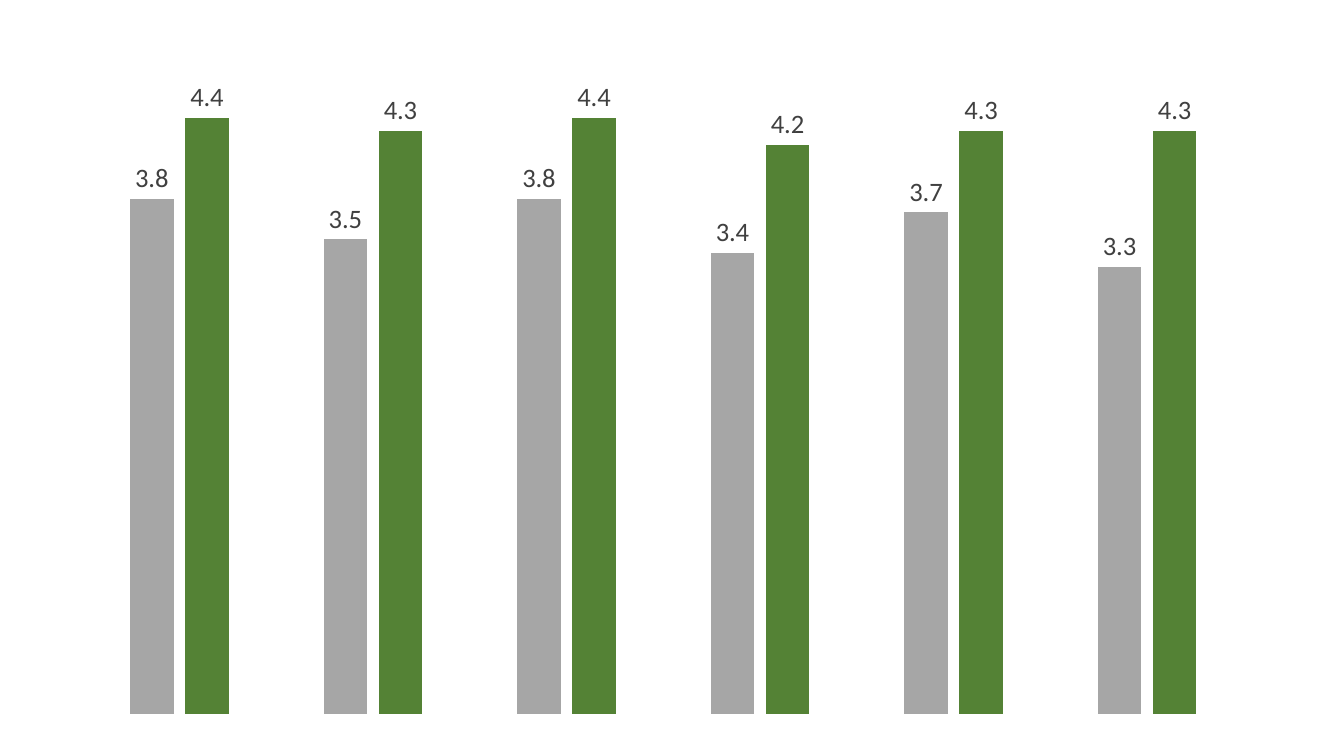
from pptx import Presentation
from pptx.chart.data import CategoryChartData
from pptx.dml.color import RGBColor
from pptx.enum.chart import XL_CHART_TYPE, XL_LABEL_POSITION
from pptx.util import Pt

BLACK = RGBColor(0x00, 0x00, 0x00)
LABEL_GRAY = RGBColor(0x40, 0x40, 0x40)
BAR_GRAY = RGBColor(0xA6, 0xA6, 0xA6)
BAR_GREEN = RGBColor(0x54, 0x82, 0x35)

CATEGORIES = ["1", "2", "3", "4", "5", "6"]
SERIES = [
    ("Series 1", [3.8, 3.5, 3.8, 3.4, 3.7, 3.3], BAR_GRAY),
    ("Series 2", [4.4, 4.3, 4.4, 4.2, 4.3, 4.3], BAR_GREEN),
]


def format_text(text, *, size, color, name="Calibri"):
    text.font.size = Pt(size)
    text.font.color.rgb = color
    text.font.name = name


class ChartSlide:
    """Holds the chart style and the slide being built."""

    number_format = "0.0"
    label_size = 19

    def __init__(self, presentation):
        self.slide = presentation.slides.add_slide(presentation.slide_layouts[6])

    def add_columns(self, left, top, width, height, categories, series):
        data = CategoryChartData(number_format=self.number_format)
        data.categories = categories
        for name, values, _ in series:
            data.add_series(name, values)
        chart = self.slide.shapes.add_chart(
            XL_CHART_TYPE.COLUMN_CLUSTERED,
            Pt(left), Pt(top), Pt(width), Pt(height), data,
        ).chart
        chart.has_legend = False
        chart.has_title = False
        format_text(chart, size=10, color=BLACK)
        self.hide_axes(chart)
        plot = chart.plots[0]
        plot.gap_width = 219
        plot.overlap = -27
        plot.vary_by_categories = False
        for bars, (_, _, color) in zip(plot.series, series):
            self.style_bars(bars, color)

    def hide_axes(self, chart):
        chart.value_axis.minimum_scale = 0
        chart.value_axis.maximum_scale = 5
        for axis in (chart.category_axis, chart.value_axis):
            axis.has_major_gridlines = False
            axis.visible = False

    def style_bars(self, bars, color):
        bars.format.fill.solid()
        bars.format.fill.fore_color.rgb = color
        bars.format.line.fill.background()
        labels = bars.data_labels
        labels.show_value = True
        labels.position = XL_LABEL_POSITION.OUTSIDE_END
        labels.number_format = self.number_format
        labels.number_format_is_linked = False
        format_text(labels, size=self.label_size, color=LABEL_GRAY)


def main():
    presentation = Presentation()
    presentation.slide_width = Pt(960)
    presentation.slide_height = Pt(540)
    chart_slide = ChartSlide(presentation)
    chart_slide.add_columns(41.76, 15.84, 864, 504, CATEGORIES, SERIES)
    presentation.save("out.pptx")


if __name__ == "__main__":
    main()
